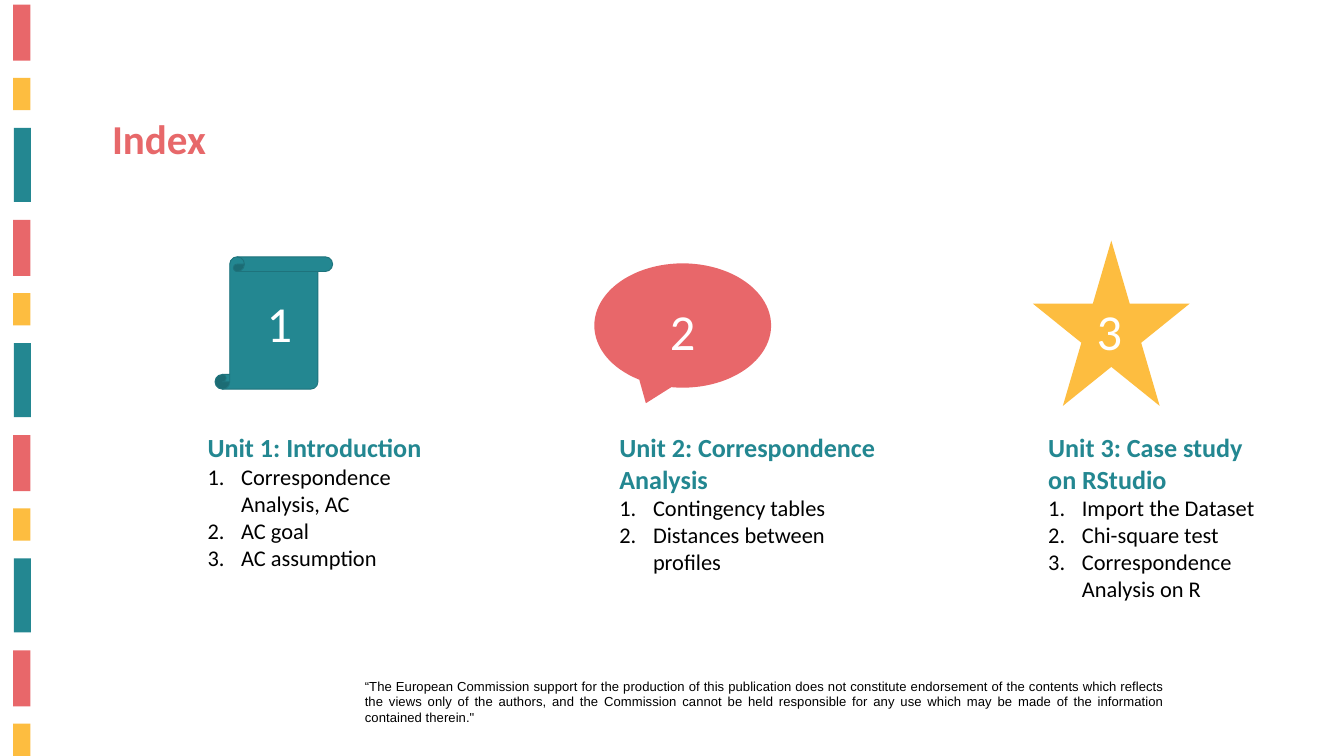
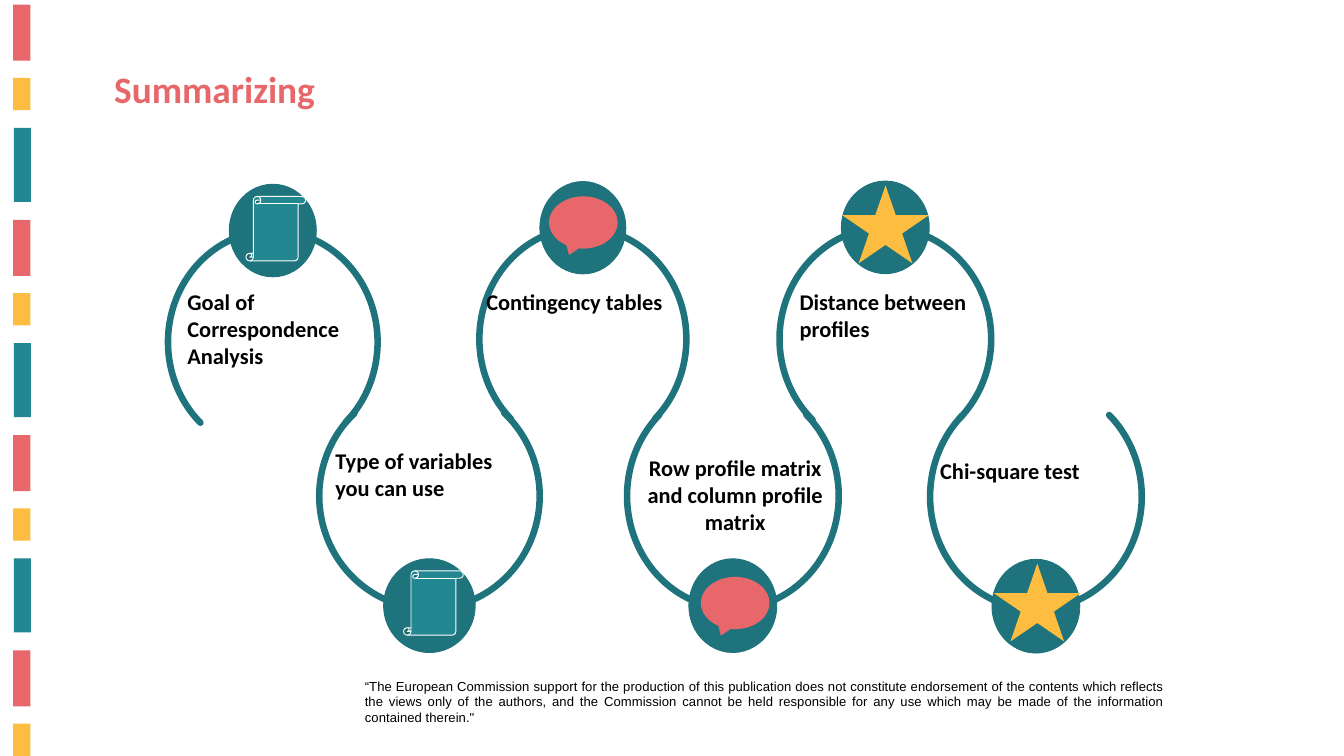
import pptx
import pptx.util
import pptx.dml.color
import pptx.enum.shapes
import pptx.enum.text
from dataclasses import dataclass
from lxml import etree

Pt = pptx.util.Pt
MSO = pptx.enum.shapes.MSO_SHAPE
ALIGN = pptx.enum.text.PP_ALIGN


@dataclass(frozen=True)
class Theme:
    red: str = "E8676A"
    yellow: str = "FDBD40"
    teal: str = "238791"
    deep_teal: str = "1E737C"
    title: str = "E7686A"
    black: str = "000000"
    white: str = "FFFFFF"
    font: str = "Calibri"
    footer_font: str = "Arial"
    footer_size: int = 14
    body_size: int = 24
    unit_size: int = 28
    number_size: int = 54


T = Theme()
SLIDE_W, SLIDE_H = 1440, 810

FOOTER = ("“The European Commission support for the production of this publication "
          "does not constitute endorsement of the contents which reflects the views "
          "only of the authors, and the Commission cannot be held responsible for any "
          "use which may be made of the information contained therein.\"")
FOOTER_BOX = (383.8, 722.9, 871, 58.3)

# Side stripes: left, first top, width, height, colour; the set repeats downwards
STRIPES = [
    (14, 5, 18.7, 60, T.red),
    (14, 83.6, 18.7, 34.4, T.yellow),
    (15, 137, 18, 79.4, T.teal),
]
STRIPE_PERIOD = 230.6

# Icon: preset, fill, size inside a dot
ICONS = {
    "scroll": (MSO.VERTICAL_SCROLL, T.teal, (64, 69)),
    "bubble": (MSO.OVAL_CALLOUT, T.red, (73.5, 56)),
    "star": (MSO.STAR_5_POINT, T.yellow, (93, 83.5)),
}

UNITS = [
    dict(icon="scroll", icon_box=(230.4, 275.2, 126, 141.8), line=T.deep_teal,
         number_box=(278.6, 309.6, 113.8, 72.7), text_box=(215.3, 459, 258.5, 220.3),
         title="Unit 1: Introduction",
         topics=["Correspondence Analysis, AC", "AC goal", "AC assumption"]),
    dict(icon="bubble", icon_box=(636.8, 282.2, 189.4, 133.2), line=None,
         number_box=(710.6, 317.5, 77.8, 72.7), text_box=(656.6, 459, 297.4, 162.7),
         title="Unit 2: Correspondence Analysis",
         topics=["Contingency tables", "Distances between profiles"]),
    dict(icon="star", icon_box=(1106.8, 257.8, 167.8, 177.1), line=None,
         number_box=(1167.8, 317.5, 108, 72.7), text_box=(1116, 459, 258.5, 191.5),
         title="Unit 3: Case study on RStudio",
         topics=["Import the Dataset", "Chi-square test", "Correspondence Analysis on R"]),
]

# Steps alternate between arcs open below and arcs open above
STEPS = [
    dict(text="Goal of Correspondence Analysis", text_box=(193.7, 305.3, 208.8, 123.8),
         arc=(180, 247, 224.6, 239), icon="scroll", shift=(3.2, -2)),
    dict(text="Type of variables you can use", text_box=(352.2, 476, 221.8, 94.3),
         arc=(342, 410.4, 236.2, 242), icon="scroll", shift=(4.3, -2.8)),
    dict(text="Contingency tables", text_box=(514, 305.3, 221.8, 65.5),
         arc=(513.6, 244, 221.8, 238.4), icon="bubble", shift=(0.5, -5.6)),
    dict(text="Row profile matrix and column profile matrix", align=ALIGN.CENTER,
         text_box=(683.3, 483, 208.8, 94.3),
         arc=(671.8, 410.4, 226.8, 242), icon="bubble", shift=(2.5, -2.8)),
    dict(text="Distance between profiles", text_box=(849.6, 305.3, 198, 94.3),
         arc=(835.2, 243.6, 226.8, 239), icon="star", shift=(0.2, -3.2)),
    dict(text="Chi-square test", text_box=(1000.2, 486, 222.5, 65.5),
         arc=(996.5, 411, 226.8, 242), icon="star", shift=(1.5, -4)),
]
ARC_ADJUST = (79.141, 28.684)
DOT_RATIO = 0.415
LOW_DOT_LIFT = 3.5


def rgb(value):
    return pptx.dml.color.RGBColor.from_string(value)


def pts(box):
    return [Pt(v) for v in box]


def shape(s, preset, box, fill=None, line=None, width=1):
    sp = s.shapes.add_shape(preset, *pts(box))
    sp.shadow.inherit = False
    if fill:
        sp.fill.solid()
        sp.fill.fore_color.rgb = rgb(fill)
    else:
        sp.fill.background()
    if line:
        sp.line.color.rgb = rgb(line)
        sp.line.width = Pt(width)
    else:
        sp.line.fill.background()
    return sp


def number_paragraph(p):
    pPr = p._p.get_or_add_pPr()
    pPr.set("marL", str(Pt(36)))
    pPr.set("indent", str(-Pt(36)))
    ns = pptx.oxml.ns
    etree.SubElement(pPr, ns.qn("a:buFont"), typeface="+mj-lt")
    etree.SubElement(pPr, ns.qn("a:buAutoNum"), type="arabicPeriod")


def write(p, text, size=T.body_size, color=T.black, bold=False, font=T.font,
          align=ALIGN.LEFT, numbered=False, spacing=None):
    p.alignment = align
    if numbered:
        number_paragraph(p)
    r = p.add_run()
    r.text = text
    r.font.name, r.font.size, r.font.bold = font, Pt(size), bold
    r.font.color.rgb = rgb(color)
    if spacing:
        r._r.get_or_add_rPr().set("spc", str(spacing))


def text_box(s, box, text, **fmt):
    tf = s.shapes.add_textbox(*pts(box)).text_frame
    tf.word_wrap = True
    write(tf.paragraphs[0], text, **fmt)
    return tf


def new_slide(prs, title, title_box, title_size):
    s = prs.slides.add_slide(prs.slide_layouts[6])
    for left, first_top, width, height, color in STRIPES:
        top = first_top
        while top + height <= SLIDE_H + 1:
            shape(s, MSO.RECTANGLE, (left, top, width, height), color)
            top += STRIPE_PERIOD
    text_box(s, FOOTER_BOX, FOOTER, size=T.footer_size, font=T.footer_font,
             align=ALIGN.JUSTIFY, spacing=5)
    text_box(s, title_box, title, size=title_size, color=T.title, bold=True)
    return s


def index_slide(prs):
    s = new_slide(prs, "Index", (113, 118, 487.4, 113.8), 44)
    for unit in UNITS:
        preset, fill, _ = ICONS[unit["icon"]]
        shape(s, preset, unit["icon_box"], fill, unit["line"])
    for number, unit in enumerate(UNITS, 1):
        tf = text_box(s, unit["text_box"], unit["title"], size=T.unit_size,
                      color=T.teal, bold=True)
        for topic in unit["topics"]:
            write(tf.add_paragraph(), topic, numbered=True)
        text_box(s, unit["number_box"], str(number), size=T.number_size, color=T.white)


def step(s, text, text_box_at, arc, icon, shift, low, align):
    """Draw one arc with its dot, icon and label; a low arc is turned upside down."""
    x, y, w, h = arc
    curve = shape(s, MSO.ARC, arc, line=T.deep_teal, width=7)
    curve.adjustments[0], curve.adjustments[1] = ARC_ADJUST
    curve.line._get_or_add_ln().set("cap", "rnd")
    curve.rotation = 180 if low else 0

    cx = x + w / 2
    cy = y + h - LOW_DOT_LIFT if low else y
    dot_w, dot_h = w * DOT_RATIO, h * DOT_RATIO
    shape(s, MSO.OVAL, (cx - dot_w / 2, cy - dot_h / 2, dot_w, dot_h),
          T.deep_teal, T.deep_teal)

    preset, fill, (icon_w, icon_h) = ICONS[icon]
    dx, dy = shift
    shape(s, preset, (cx + dx - icon_w / 2, cy + dy - icon_h / 2, icon_w, icon_h),
          fill, T.white if icon == "scroll" else None)
    text_box(s, text_box_at, text, bold=True, align=align)


def summary_slide(prs):
    s = new_slide(prs, "Summarizing", (115.2, 67, 473.8, 55.4), 40)
    for i, item in enumerate(STEPS):
        step(s, item["text"], item["text_box"], item["arc"], item["icon"],
             item["shift"], low=i % 2 == 1, align=item.get("align", ALIGN.LEFT))


def main():
    prs = pptx.Presentation()
    prs.slide_width, prs.slide_height = Pt(SLIDE_W), Pt(SLIDE_H)
    index_slide(prs)
    summary_slide(prs)
    prs.save("out.pptx")


if __name__ == "__main__":
    main()
